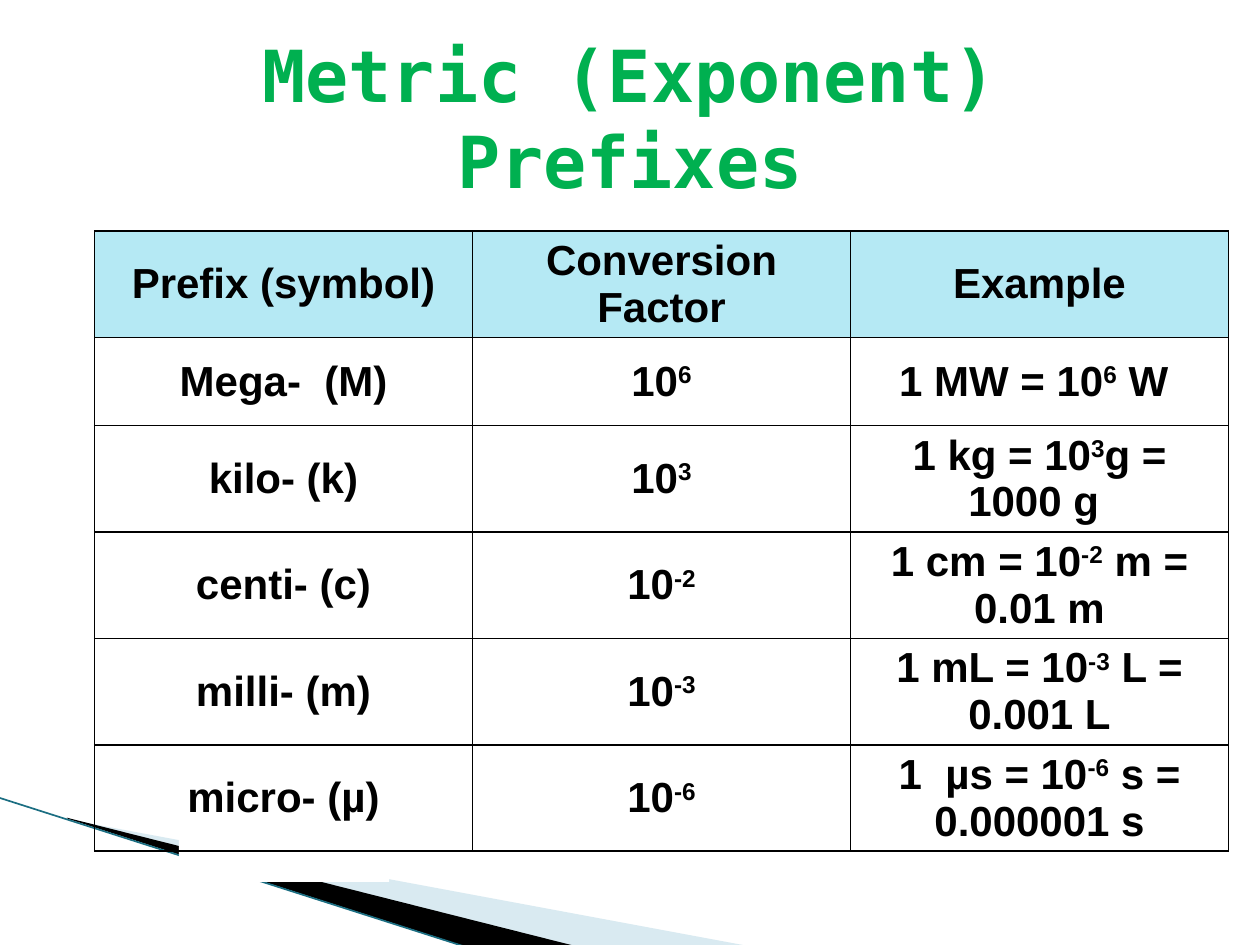
from lxml.etree import SubElement
from pptx import Presentation
from pptx.dml.color import RGBColor
from pptx.enum.shapes import MSO_CONNECTOR, MSO_SHAPE
from pptx.enum.text import MSO_ANCHOR as Anchor, PP_ALIGN as Align
from pptx.oxml.ns import qn
from pptx.util import Pt

BLACK = RGBColor(0, 0, 0)
WHITE = RGBColor(255, 255, 255)
GREEN = RGBColor(0x00, 0xB0, 0x50)
HEADER_BLUE = RGBColor(0xB5, 0xE9, 0xF4)
PALE_BLUE = RGBColor(0xA0, 0xCB, 0xDC)
LINE_TEAL = RGBColor(0x1B, 0x6E, 0x82)

TITLE = "Metric (Exponent) Prefixes"
# Text between carets is superscript
ROWS = [
    ("Prefix (symbol)", "Conversion Factor", "Example"),
    ("Mega-  (M)", "10^6^", "1 MW = 10^6^ W "),
    ("kilo- (k)", "10^3^", "1 kg = 10^3^g = 1000 g "),
    ("centi- (c)", "10^-2^", "1 cm = 10^-2^ m = 0.01 m"),
    ("milli- (m)", "10^-3^", "1 mL = 10^-3^ L = 0.001 L"),
    ("micro- (µ)", "10^-6^", "1  µs = 10^-6^ s = 0.000001 s"),
]
COLUMN_WIDTH, HEADER_HEIGHT, ROW_HEIGHT = 216, 59, 50.4
CELL_MARGIN = 1.6

# Corner bands: outline points, colour, opacity in percent
BANDS = [
    ([(39.6, 468.4), (428.4, 540.7), (328.3, 540.7), (39.6, 468)], PALE_BLUE, 40),
    ([(38.2, 467.3), (329, 540.7), (267.8, 541.4), (38.9, 468)], BLACK, 100),
]


def write_text(frame, text, font="Arial", size=24, color=BLACK):
    frame.word_wrap = True
    paragraph = frame.paragraphs[0]
    paragraph.alignment = Align.CENTER
    for index, part in enumerate(text.split("^")):
        if not part:
            continue
        run = paragraph.add_run()
        run.text = part
        run.font.name, run.font.size, run.font.bold = font, Pt(size), True
        run.font.color.rgb = color
        if index % 2:
            run.font._element.set("baseline", "30000")


def fill_shape(shape, color, opacity=100):
    shape.shadow.inherit = False
    shape.fill.solid()
    shape.fill.fore_color.rgb = color
    shape.line.fill.background()
    if opacity < 100:
        color_element = shape._element.spPr.find(qn("a:solidFill"))[0]
        SubElement(color_element, qn("a:alpha"), val=str(opacity * 1000))


def add_borders(cell):
    properties = cell._tc.get_or_add_tcPr()
    for side in ("L", "R", "T", "B"):
        border = SubElement(properties, qn(f"a:ln{side}"), w=str(Pt(1)))
        fill = SubElement(border, qn("a:solidFill"))
        SubElement(fill, qn("a:srgbClr"), val=str(BLACK))


presentation = Presentation()
presentation.slide_width, presentation.slide_height = Pt(720), Pt(540)
slide = presentation.slides.add_slide(presentation.slide_layouts[6])
shapes = slide.shapes

# Corner decoration
for points, color, opacity in BANDS:
    start, *others = [(Pt(x), Pt(y)) for x, y in points]
    builder = shapes.build_freeform(*start)
    builder.add_line_segments(others)
    fill_shape(builder.convert_to_shape(), color, opacity)

edge = shapes.add_connector(
    MSO_CONNECTOR.STRAIGHT, Pt(-0.7), Pt(455.8), Pt(267.1), Pt(541.4))
edge.line.color.rgb = LINE_TEAL
edge.line.width = Pt(0.95)
SubElement(edge._element.spPr, qn("a:effectLst"))

cover = shapes.add_shape(
    MSO_SHAPE.RECTANGLE, Pt(102.2), Pt(468), Pt(120.2), Pt(36))
fill_shape(cover, WHITE)

# Title
title = shapes.add_textbox(Pt(36), Pt(21.6), Pt(648), Pt(90))
title.text_frame.vertical_anchor = Anchor.MIDDLE
write_text(title.text_frame, TITLE, font="DejaVu Sans Mono", size=41, color=GREEN)

# Prefix table
heights = [HEADER_HEIGHT] + [ROW_HEIGHT] * (len(ROWS) - 1)
table = shapes.add_table(
    len(ROWS), len(ROWS[0]), Pt(54), Pt(132),
    Pt(COLUMN_WIDTH * len(ROWS[0])), Pt(sum(heights))).table
table.horz_banding = False
for column in table.columns:
    column.width = Pt(COLUMN_WIDTH)
for row_index, (texts, height) in enumerate(zip(ROWS, heights)):
    table.rows[row_index].height = Pt(height)
    for column_index, text in enumerate(texts):
        cell = table.cell(row_index, column_index)
        cell.vertical_anchor = Anchor.MIDDLE
        cell.margin_top = cell.margin_bottom = Pt(CELL_MARGIN)
        add_borders(cell)
        if row_index == 0:
            cell.fill.solid()
            cell.fill.fore_color.rgb = HEADER_BLUE
        else:
            cell.fill.background()
        write_text(cell.text_frame, text)

presentation.save("out.pptx")
